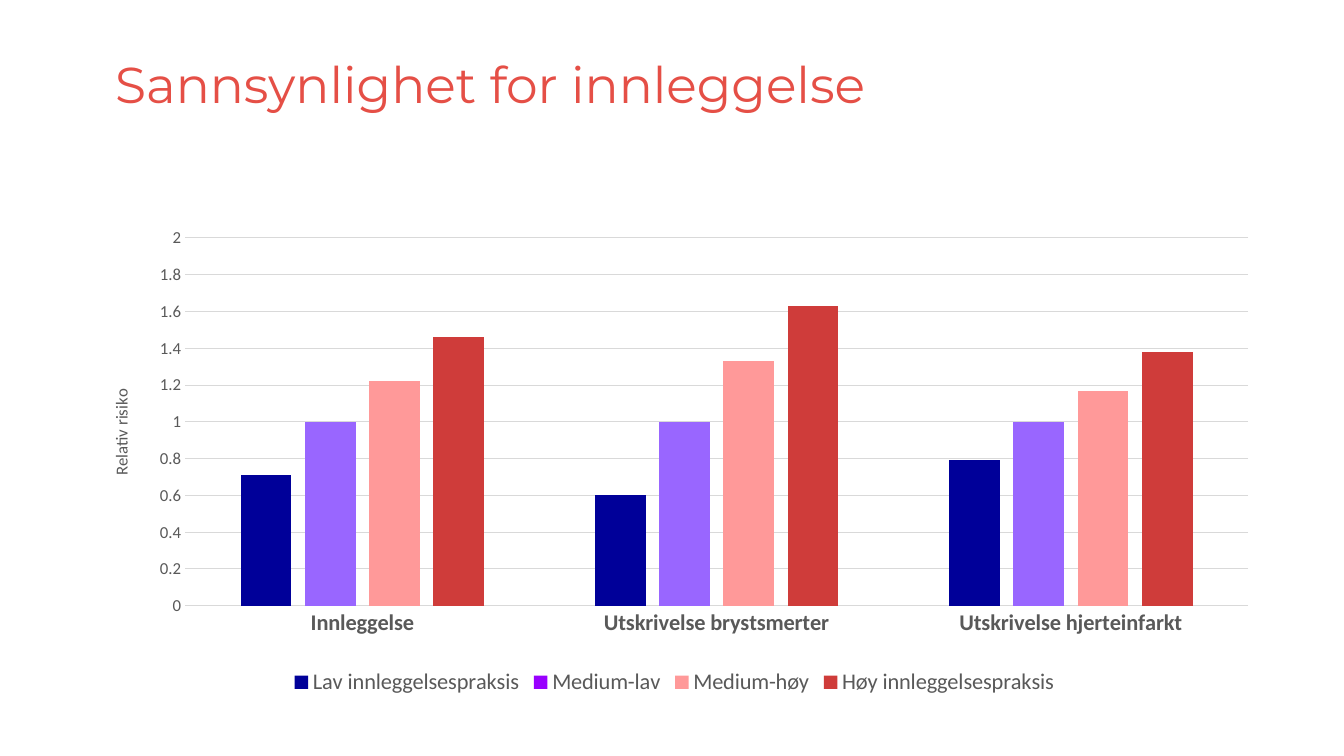
from dataclasses import dataclass

from lxml import etree
from pptx import Presentation
from pptx.chart.data import CategoryChartData
from pptx.dml.color import RGBColor
from pptx.enum.chart import XL_CHART_TYPE, XL_LEGEND_POSITION, XL_TICK_MARK
from pptx.enum.text import MSO_ANCHOR, PP_ALIGN
from pptx.oxml.ns import qn
from pptx.util import Cm, Pt

CLUSTERED = XL_CHART_TYPE.COLUMN_CLUSTERED
LEGEND_BOTTOM = XL_LEGEND_POSITION.BOTTOM
NO_TICK = XL_TICK_MARK.NONE
TOP = MSO_ANCHOR.TOP
LEFT = PP_ALIGN.LEFT


@dataclass(frozen=True)
class Theme:
    title_font: str = "Montserrat"
    chart_font: str = "Calibri"
    title_size: int = 36
    label_size: int = 16
    value_size: int = 12
    base_size: int = 10
    title_color: str = "E54F46"
    text_color: str = "595959"
    base_color: str = "000000"
    grid_color: str = "D9D9D9"
    line_width: float = 0.75


THEME = Theme()


def style_font(font, name, size, color, bold=False):
    for attribute, value in {"name": name, "size": Pt(size), "bold": bold}.items():
        setattr(font, attribute, value)
    font.color.rgb = RGBColor.from_string(color)


def style_line(line):
    line.color.rgb = RGBColor.from_string(THEME.grid_color)
    line.width = Pt(THEME.line_width)


presentation = Presentation()
presentation.slide_width = Cm(33.87)
presentation.slide_height = Cm(19.05)
slide = presentation.slides.add_slide(presentation.slide_layouts[5])

# Title
title = slide.shapes.title
title.left, title.top, title.width, title.height = Cm(2.9), Cm(1.5), Cm(21.87), Cm(2.44)
title_frame = title.text_frame
title_format = {"margin_left": 0, "margin_top": 0, "margin_right": 0,
                "margin_bottom": 0, "vertical_anchor": TOP, "word_wrap": True}
for attribute, value in title_format.items():
    setattr(title_frame, attribute, value)
title_frame.text = "Sannsynlighet for innleggelse"
paragraph = title_frame.paragraphs[0]
paragraph.alignment = LEFT
paragraph.line_spacing = 0.9
style_font(paragraph.runs[0].font, THEME.title_font, THEME.title_size, THEME.title_color)

# Chart data: name, values, series colour, column colour
practices = [
    ("Lav innleggelsespraksis", (0.71, 0.6, 0.79), "000099", "000099"),
    ("Medium-lav", (1, 1, 1), "9900FF", "9966FF"),
    ("Medium-høy", (1.22, 1.33, 1.17), "FF9999", "FF9999"),
    ("Høy innleggelsespraksis", (1.46, 1.63, 1.38), "CF3C3A", "CF3C3A"),
]
chart_data = CategoryChartData()
chart_data.categories = ["Innleggelse", "Utskrivelse brystsmerter", "Utskrivelse hjerteinfarkt"]
for name, values, _, _ in practices:
    chart_data.add_series(name, values)

chart = slide.shapes.add_chart(
    CLUSTERED, Cm(2.39), Cm(5.56), Cm(29.21), Cm(12.09), chart_data).chart
chart.has_title = False
style_font(chart.font, THEME.chart_font, THEME.base_size, THEME.base_color)

# Columns
plot = chart.plots[0]
plot.gap_width = 219
plot.overlap = -27
plot.vary_by_categories = False
for series, (_, values, series_color, column_color) in zip(plot.series, practices):
    series.invert_if_negative = False
    series.format.fill.solid()
    series.format.fill.fore_color.rgb = RGBColor.from_string(series_color)
    if column_color != series_color:
        for index in range(len(values)):
            fill = series.points[index].format.fill
            fill.solid()
            fill.fore_color.rgb = RGBColor.from_string(column_color)

# Axes
category_axis, value_axis = chart.category_axis, chart.value_axis
for axis in (category_axis, value_axis):
    axis.major_tick_mark = NO_TICK
    axis.minor_tick_mark = NO_TICK
style_font(category_axis.tick_labels.font, THEME.chart_font, THEME.label_size,
           THEME.text_color, bold=True)
style_line(category_axis.format.line)

style_font(value_axis.tick_labels.font, THEME.chart_font, THEME.value_size, THEME.text_color)
value_axis.minimum_scale = 0
value_axis.maximum_scale = 2
value_axis.major_unit = 0.2
value_axis.format.line.fill.background()
value_axis.has_major_gridlines = True
style_line(value_axis.major_gridlines.format.line)
axis_title_frame = value_axis.axis_title.text_frame
axis_title_frame.text = "Relativ risiko"
style_font(axis_title_frame.paragraphs[0].runs[0].font, THEME.chart_font,
           THEME.value_size, THEME.text_color)

# Legend
chart.has_legend = True
chart.legend.position = LEGEND_BOTTOM
chart.legend.include_in_layout = False
style_font(chart.legend.font, THEME.chart_font, THEME.label_size, THEME.text_color)

# Fixed inner plot area, as fractions of the chart
plot_area = chart.element.find(".//" + qn("c:plotArea"))
for old_layout in plot_area.findall(qn("c:layout")):
    plot_area.remove(old_layout)
layout = etree.Element(qn("c:layout"))
plot_area.insert(0, layout)
manual_layout = etree.SubElement(layout, qn("c:manualLayout"))
layout_values = {"layoutTarget": "inner", "xMode": "edge", "yMode": "edge",
                 "x": 0.08, "y": 0.04, "w": 0.92, "h": 0.77}
layout_values.update(x=0.078, y=0.036, w=0.917, h=0.767)
for tag, value in layout_values.items():
    etree.SubElement(manual_layout, qn("c:" + tag), val=str(value))

presentation.save("out.pptx")
